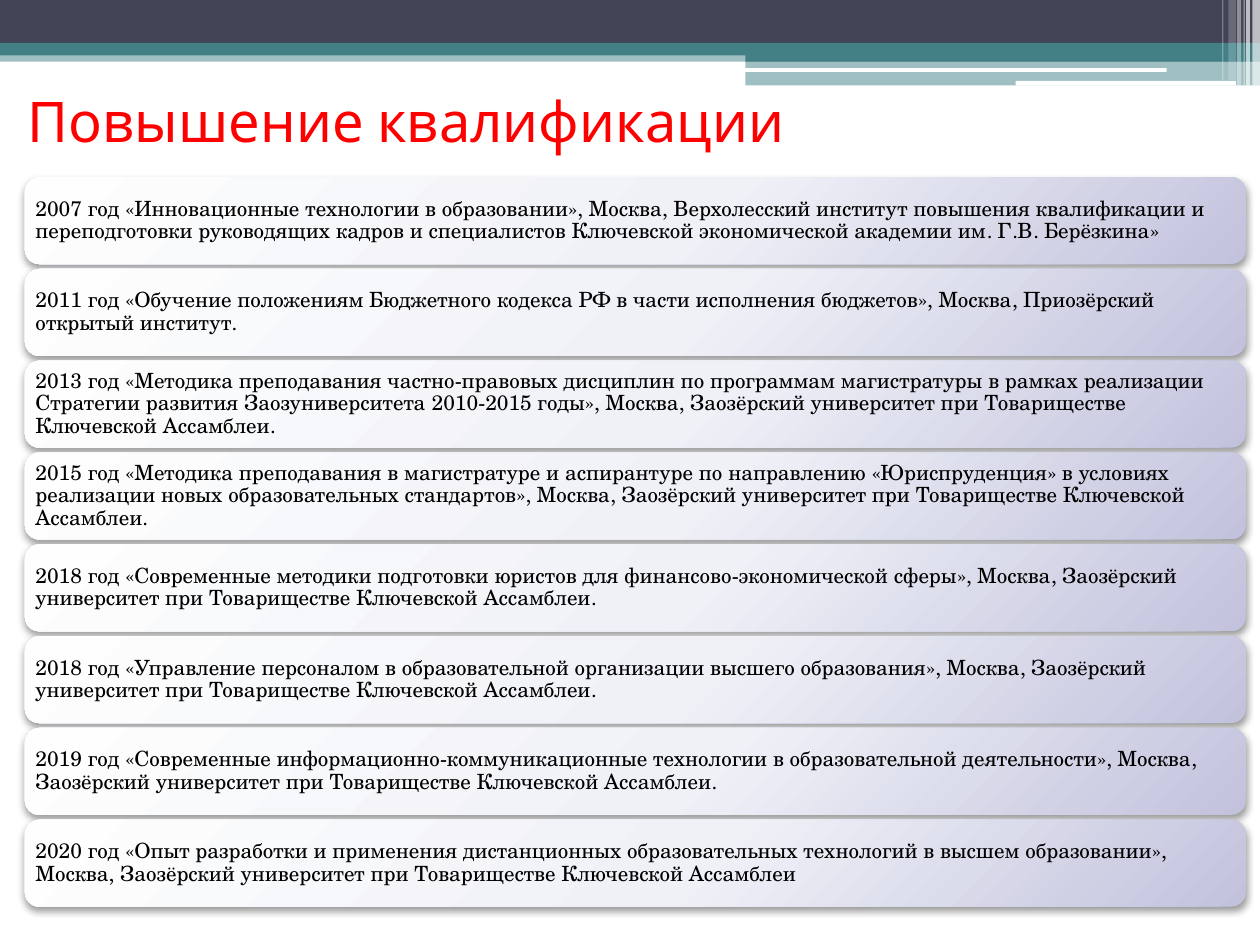
from dataclasses import dataclass

from lxml import etree
from pptx import Presentation
from pptx.dml.color import RGBColor
from pptx.enum.shapes import MSO_SHAPE
from pptx.enum.text import MSO_ANCHOR, PP_ALIGN
from pptx.oxml import parse_xml
from pptx.oxml.ns import nsdecls, qn
from pptx.util import Pt

RECTANGLE = MSO_SHAPE.RECTANGLE
ROUNDED = MSO_SHAPE.ROUNDED_RECTANGLE
MIDDLE = MSO_ANCHOR.MIDDLE
LEFT = PP_ALIGN.LEFT


@dataclass(frozen=True)
class Theme:
    """Colours, fonts and type sizes of the slide."""
    navy: str = "424456"
    teal: str = "438086"
    white: str = "FFFFFF"
    title_color: str = "FF0000"
    body_color: str = "000000"
    shadow: str = "000000"
    card_stops: tuple = ((0, "FEFEFE"), (55, "F0F1F7"), (100, "C2C2DD"))
    title_font: str = "Karla"
    body_font: str = "TeX Gyre Schola"
    title_size: int = 32
    body_size: int = 12


THEME = Theme()

BANDS = (
    (RECTANGLE, 0, 28.8, 720, 6.5, THEME.teal, 50),
    (RECTANGLE, 0, 0, 720, 24.5, THEME.navy, 100),
    (RECTANGLE, 0, 24.5, 720, 7.2, THEME.teal, 100),
    (RECTANGLE, 426, 28, 294, 7.2, THEME.teal, 100),
    (RECTANGLE, 426, 34.6, 294, 14.2, THEME.teal, 50),
    (ROUNDED, 425.5, 38.9, 241.2, 2.2, THEME.white, 100),
    (ROUNDED, 580.4, 46.2, 126, 2.7, THEME.white, 100),
)

STRIPES = (
    (715.7, 4.3, 49, 65),
    (712.1, 2.2, 49, 65),
    (710.6, 0.7, 49, 60),
    (707, 2.2, 49, 40),
    (702, 4.3, 46, 20),
    (698.4, 0.7, 46, 30),
)

TITLE = "Повышение квалификации"
UNIVERSITY = "Москва, Заозёрский университет при Товариществе Ключевской Ассамблеи"
COURSES = (
    "2007 год «Инновационные технологии в образовании», Москва, Верхолесский "
    "институт повышения квалификации и переподготовки руководящих кадров и "
    "специалистов Ключевской экономической академии им. Г.В. Берёзкина»",
    "2011 год «Обучение положениям Бюджетного кодекса РФ в части исполнения "
    "бюджетов», Москва, Приозёрский открытый институт.",
    "2013 год «Методика преподавания частно-правовых дисциплин по программам "
    "магистратуры в рамках реализации Стратегии развития Заозуниверситета "
    f"2010-2015 годы», {UNIVERSITY}.",
    "2015 год «Методика преподавания в магистратуре и аспирантуре по направлению "
    "«Юриспруденция» в условиях реализации новых образовательных стандартов», "
    f"{UNIVERSITY}.",
    "2018 год «Современные методики подготовки юристов для "
    f"финансово-экономической сферы», {UNIVERSITY}.",
    "2018 год «Управление персоналом в образовательной организации высшего "
    f"образования», {UNIVERSITY}.",
    "2019 год «Современные информационно-коммуникационные технологии в "
    f"образовательной деятельности», {UNIVERSITY}.",
    "2020 год «Опыт разработки и применения дистанционных образовательных "
    f"технологий в высшем образовании», {UNIVERSITY}",
)

CARD_LEFT, CARD_TOP, CARD_WIDTH, CARD_HEIGHT = 14.2, 101.2, 697.7, 49.7
CARD_PITCH = 52.46
CARD_INSET = 3.6


def add_block(slide, kind, left, top, width, height, color, opacity=100):
    """Add a flat shape without outline or shadow."""
    shape = slide.shapes.add_shape(kind, Pt(left), Pt(top), Pt(width), Pt(height))
    shape.shadow.inherit = False
    shape.line.fill.background()
    shape.fill.solid()
    shape.fill.fore_color.rgb = RGBColor.from_string(color)
    if opacity < 100:
        color_node = next(shape.element.spPr.iter(qn("a:srgbClr")))
        etree.SubElement(color_node, qn("a:alpha"), val=str(opacity * 1000))
    return shape


def write_text(frame, text, font_name, size, color, spacing=1.0):
    """Write one left-aligned, vertically centred paragraph."""
    frame.word_wrap = True
    frame.vertical_anchor = MIDDLE
    paragraph = frame.paragraphs[0]
    paragraph.alignment = LEFT
    paragraph.line_spacing = spacing
    run = paragraph.add_run()
    run.text = text
    run.font.name = font_name
    run.font.size = Pt(size)
    run.font.color.rgb = RGBColor.from_string(color)


def add_title(slide):
    """Add the slide heading."""
    box = slide.shapes.add_textbox(Pt(8.6), Pt(37.4), Pt(711.4), Pt(62.6))
    write_text(box.text_frame, TITLE, THEME.title_font, THEME.title_size, THEME.title_color)


def style_card(shape):
    """Give a card its radial gradient and soft drop shadow."""
    stops = "".join(
        f'<a:gs pos="{position * 1000}"><a:srgbClr val="{color}"/></a:gs>'
        for position, color in THEME.card_stops
    )
    gradient = parse_xml(
        f'<a:gradFill {nsdecls("a")} rotWithShape="1"><a:gsLst>{stops}</a:gsLst>'
        '<a:path path="circle"><a:fillToRect l="-40000" t="-90000" '
        'r="140000" b="190000"/></a:path></a:gradFill>'
    )
    shadow = parse_xml(
        f'<a:outerShdw {nsdecls("a")} blurRad="{Pt(4.1)}" dist="{Pt(2)}" '
        f'dir="5400000" rotWithShape="0"><a:srgbClr val="{THEME.shadow}">'
        '<a:alpha val="40000"/></a:srgbClr></a:outerShdw>'
    )
    properties = shape.element.spPr
    properties.replace(properties.find(qn("a:solidFill")), gradient)
    properties.find(qn("a:effectLst")).append(shadow)


def add_card(slide, index, text):
    """Add one course card at its place in the column."""
    top = CARD_TOP + index * CARD_PITCH
    card = add_block(slide, ROUNDED, CARD_LEFT, top, CARD_WIDTH, CARD_HEIGHT, THEME.white)
    style_card(card)
    frame = card.text_frame
    frame.margin_left = frame.margin_right = Pt(CARD_INSET)
    frame.margin_top = frame.margin_bottom = Pt(CARD_INSET)
    write_text(frame, text, THEME.body_font, THEME.body_size, THEME.body_color, 0.9)


def main():
    """Build and save the slide."""
    presentation = Presentation()
    presentation.slide_width, presentation.slide_height = Pt(720), Pt(540)
    slide = presentation.slides.add_slide(presentation.slide_layouts[6])
    for band in BANDS:
        add_block(slide, *band)
    for left, width, height, opacity in STRIPES:
        add_block(slide, RECTANGLE, left, 0, width, height, THEME.white, opacity)
    add_title(slide)
    for index, course in enumerate(COURSES):
        add_card(slide, index, course)
    presentation.save("out.pptx")


if __name__ == "__main__":
    main()
